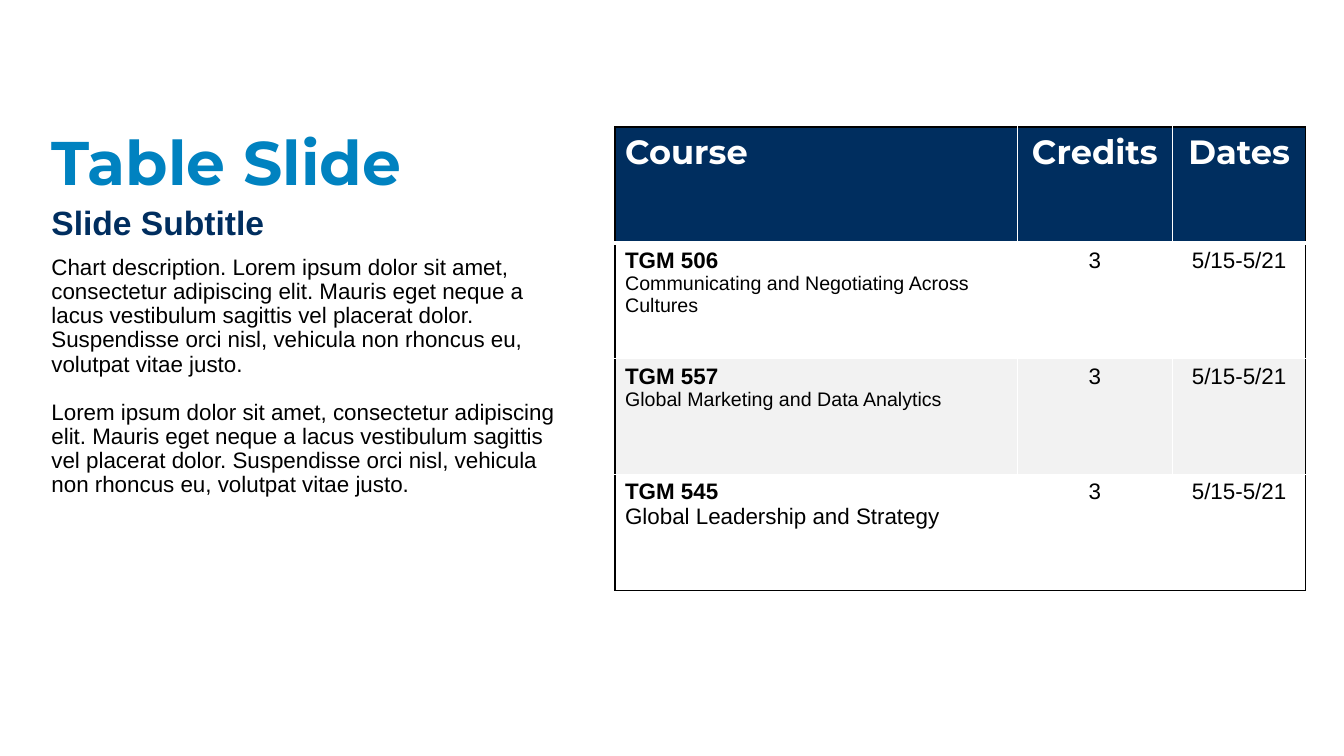
from dataclasses import dataclass

from lxml.etree import SubElement
from pptx import Presentation
from pptx.dml.color import RGBColor
from pptx.enum.text import MSO_ANCHOR, MSO_AUTO_SIZE, PP_ALIGN
from pptx.oxml.ns import qn
from pptx.util import Inches, Pt


@dataclass(frozen=True)
class Theme:
    heading_font: str = "Montserrat"
    body_font: str = "Arial"
    blue: str = "0082C0"
    navy: str = "002E5F"
    black: str = "000000"
    white: str = "FFFFFF"
    band: str = "F2F2F2"
    title_size: int = 44
    heading_size: int = 24
    body_size: int = 16
    detail_size: int = 14
    rule_width: int = 1
    header_rule_width: int = 3


THEME = Theme()
DESCRIPTION = [
    "Chart description. Lorem ipsum dolor sit amet, consectetur adipiscing elit. "
    "Mauris eget neque a lacus vestibulum sagittis vel placerat dolor. "
    "Suspendisse orci nisl, vehicula non rhoncus eu, volutpat vitae justo.",
    "Lorem ipsum dolor sit amet, consectetur adipiscing elit. "
    "Mauris eget neque a lacus vestibulum sagittis vel placerat dolor. "
    "Suspendisse orci nisl, vehicula non rhoncus eu, volutpat vitae justo.",
]
HEADINGS = ["Course", "Credits", "Dates"]
COURSES = [
    ("TGM 506", "Communicating and Negotiating Across Cultures", THEME.detail_size),
    ("TGM 557", "Global Marketing and Data Analytics", THEME.detail_size),
    ("TGM 545", "Global Leadership and Strategy", THEME.body_size),
]
CREDITS = "3"
DATES = "5/15-5/21"
COLUMN_WIDTHS = [3.99, 1.54, 1.32]
ROW_HEIGHT = 1.15


def add_styled_run(paragraph, wording, size, color, font=THEME.body_font, bold=False):
    run = paragraph.add_run()
    run.text = wording
    run.font.name = font
    run.font.size = Pt(size)
    run.font.bold = bold
    run.font.color.rgb = RGBColor.from_string(color)


def fill_placeholder(placeholder, top, height, wordings, size, color, **style):
    placeholder.left, placeholder.top = Inches(0.41), Inches(top)
    placeholder.width, placeholder.height = Inches(5.31), Inches(height)
    frame = placeholder.text_frame
    frame.word_wrap = True
    frame.auto_size = MSO_AUTO_SIZE.NONE
    frame.vertical_anchor = MSO_ANCHOR.TOP
    for index, wording in enumerate(wordings):
        paragraph = frame.add_paragraph() if index else frame.paragraphs[0]
        properties = paragraph._p.get_or_add_pPr()
        properties.set("marL", "0")
        properties.set("indent", "0")
        SubElement(properties, qn("a:buNone"))
        paragraph.alignment = PP_ALIGN.LEFT
        paragraph.line_spacing = 0.9
        paragraph.space_before = Pt(17.3 if index else 0)
        add_styled_run(paragraph, wording, size, color, **style)


def set_borders(cell, row, column, last_row, last_column):
    edges = {
        "lnL": column == 0,
        "lnR": column == last_column,
        "lnT": row == 0,
        "lnB": row == last_row,
    }
    header_rules = {(0, "lnB"), (1, "lnT")}
    properties = cell._tc.get_or_add_tcPr()
    for side, outer in edges.items():
        width = THEME.header_rule_width if (row, side) in header_rules else THEME.rule_width
        line = SubElement(properties, qn(f"a:{side}"), w=str(Pt(width)))
        paint = SubElement(line, qn("a:solidFill"))
        SubElement(paint, qn("a:srgbClr"), val=THEME.black if outer else THEME.white)


def cell_lines(row, column):
    if row == 0:
        return [(HEADINGS[column], THEME.heading_size, THEME.white, THEME.heading_font, True)]
    if column:
        wording = CREDITS if column == 1 else DATES
        return [(wording, THEME.body_size, THEME.black)]
    code, name, name_size = COURSES[row - 1]
    return [
        (code, THEME.body_size, THEME.black, THEME.body_font, True),
        (name, name_size, THEME.black),
    ]


def add_course_table(slide):
    row_count, column_count = len(COURSES) + 1, len(HEADINGS)
    table = slide.shapes.add_table(
        row_count, column_count, Inches(6.1), Inches(1.26),
        Inches(sum(COLUMN_WIDTHS)), Inches(ROW_HEIGHT * row_count),
    ).table
    table.horz_banding = False
    for column, width in zip(table.columns, COLUMN_WIDTHS):
        column.width = Inches(width)
    for row_index, row in enumerate(table.rows):
        row.height = Inches(ROW_HEIGHT)
        background = THEME.navy if row_index == 0 else THEME.band if row_index == 2 else THEME.white
        for column_index, cell in enumerate(row.cells):
            set_borders(cell, row_index, column_index, row_count - 1, column_count - 1)
            cell.fill.solid()
            cell.fill.fore_color.rgb = RGBColor.from_string(background)
            frame = cell.text_frame
            for index, line in enumerate(cell_lines(row_index, column_index)):
                paragraph = frame.add_paragraph() if index else frame.paragraphs[0]
                paragraph.alignment = PP_ALIGN.CENTER if column_index else PP_ALIGN.LEFT
                add_styled_run(paragraph, *line)


def main():
    presentation = Presentation()
    presentation.slide_width, presentation.slide_height = Inches(13.33), Inches(7.5)
    slide = presentation.slides.add_slide(presentation.slide_layouts[3])
    title, subtitle, description = slide.placeholders
    fill_placeholder(title, 1.26, 0.71, ["Table Slide"], THEME.title_size, THEME.blue,
                     font=THEME.heading_font, bold=True)
    fill_placeholder(subtitle, 2, 0.45, ["Slide Subtitle"], THEME.heading_size, THEME.navy,
                     bold=True)
    fill_placeholder(description, 2.49, 3.36, DESCRIPTION, THEME.body_size, THEME.black)
    add_course_table(slide)
    presentation.save("out.pptx")


if __name__ == "__main__":
    main()
